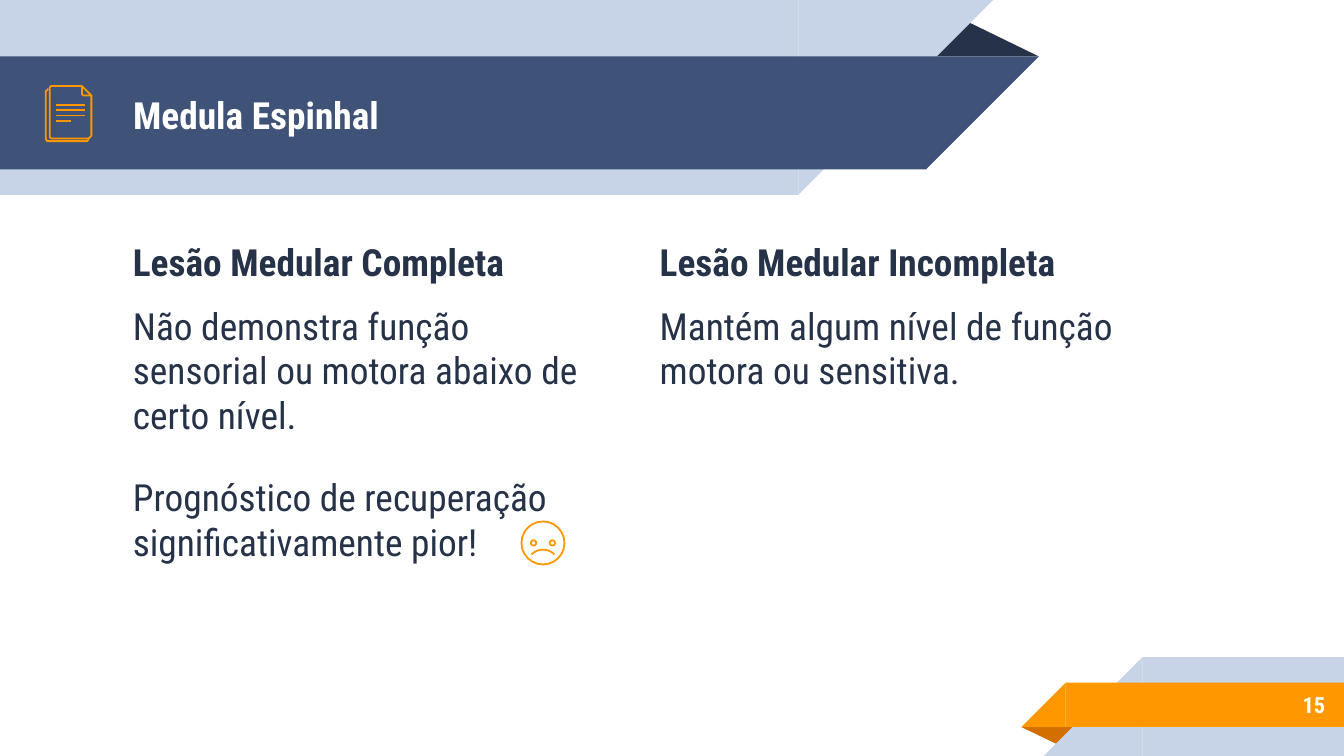
import math
from pptx import Presentation
from pptx.dml.color import RGBColor
from pptx.enum.shapes import MSO_CONNECTOR, MSO_SHAPE
from pptx.enum.text import MSO_ANCHOR, MSO_AUTO_SIZE, PP_ALIGN
from pptx.oxml.ns import qn
from pptx.util import Inches, Pt
from lxml import etree

RECT, OVAL = MSO_SHAPE.RECTANGLE, MSO_SHAPE.OVAL
CORNER, FOLD = MSO_SHAPE.RIGHT_TRIANGLE, MSO_SHAPE.ISOSCELES_TRIANGLE
STRAIGHT = MSO_CONNECTOR.STRAIGHT
TOP, MIDDLE = MSO_ANCHOR.TOP, MSO_ANCHOR.MIDDLE
LEFT, RIGHT = PP_ALIGN.LEFT, PP_ALIGN.RIGHT
NO_FIT = MSO_AUTO_SIZE.NONE

FONT = "Roboto Condensed"
PALE, BLUE, DARK = "C7D3E6", "3F5378", "263248"
ORANGE, RUST, WHITE = "FF9800", "D26F00", "FFFFFF"
STROKE = 0.96
WIDE = 10
HIGH = WIDE * 9 / 16


def color(code):
    return RGBColor.from_string(code)


def inches(*values):
    return [Inches(value) for value in values]


def write(frame, text, size=20, ink=DARK, bold=False, align=LEFT,
          before=0, after=0, first=False):
    """Add one formatted paragraph, reusing the empty one when first."""
    para = frame.paragraphs[0] if first else frame.add_paragraph()
    para.alignment = align
    para.space_before, para.space_after = Pt(before), Pt(after)
    run = para.add_run()
    run.text = text
    font = run.font
    font.name, font.size, font.bold = FONT, Pt(size), bold
    font.color.rgb = color(ink)


def set_frame(shape, anchor=TOP):
    frame = shape.text_frame
    frame.word_wrap, frame.auto_size = True, NO_FIT
    frame.vertical_anchor = anchor
    frame.margin_left = frame.margin_right = Inches(0.1)
    frame.margin_top = frame.margin_bottom = Inches(0.1)
    return frame


def add_box(slide, box, anchor=TOP):
    return set_frame(slide.shapes.add_textbox(*inches(*box)), anchor)


def add_solid(slide, kind, box, fill, turn=0):
    shape = slide.shapes.add_shape(kind, *inches(*box))
    shape.shadow.inherit = False
    shape.fill.solid()
    shape.fill.fore_color.rgb = color(fill)
    shape.line.fill.background()
    shape.rotation = turn
    return shape


def set_stroke(shape):
    shape.line.color.rgb = color(ORANGE)
    shape.line.width = Pt(STROKE)


def add_outline(shape):
    shape.shadow.inherit = False
    shape.fill.background()
    set_stroke(shape)


def add_path(slide, x, y, points, close=False):
    spots = [inches(x + dx, y + dy) for dx, dy in points]
    path = slide.shapes.build_freeform(*spots[0])
    path.add_line_segments(spots[1:], close=close)
    add_outline(path.convert_to_shape())


def add_ring(slide, x, y, radius):
    box = inches(x - radius, y - radius, 2 * radius, 2 * radius)
    add_outline(slide.shapes.add_shape(OVAL, *box))


def add_rule(slide, x, y, width):
    rule = slide.shapes.add_connector(STRAIGHT, *inches(x, y, x + width, y))
    set_stroke(rule)
    etree.SubElement(rule._element.spPr, qn("a:effectLst"))


def add_fold(slide, box, fill, turn=0):
    add_solid(slide, FOLD, box, fill, turn).adjustments[0] = 0.324


def add_head_band(slide, top, width, height, fill):
    """Band from the left edge, cut at 45 degrees on its right."""
    add_solid(slide, RECT, (0, top, width, height), fill)
    add_solid(slide, CORNER, (width, top, height, height), fill, 90)


def add_foot_band(slide, left, top, height, fill):
    """Band to the right edge, cut at 45 degrees on its left."""
    add_solid(slide, RECT, (left, top, WIDE - left, height), fill)
    add_solid(slide, CORNER, (left - height, top, height, height), fill, 270)


def add_header(slide, text):
    add_fold(slide, (6.88, 0.14, 0.85, 0.28), DARK)
    add_head_band(slide, 0, 5.94, 1.45, PALE)
    add_head_band(slide, 0.42, 6.89, 0.84, BLUE)
    title = slide.shapes.title
    title.left, title.top, title.width, title.height = inches(
        0.89, 0.43, 5.75, 0.84)
    write(set_frame(title, MIDDLE), text, ink=WHITE, bold=True, first=True)


def add_footer(slide, number):
    add_fold(slide, (7.6, 5.41, 0.43, 0.14), RUST, 180)
    add_foot_band(slide, 8.5, 4.89, HIGH - 4.89, PALE)
    add_foot_band(slide, 7.93, 5.08, 0.33, ORANGE)
    frame = add_box(slide, (8.33, 5.07, 1.63, 0.35), MIDDLE)
    write(frame, number, size=12, ink=WHITE, bold=True, align=RIGHT,
          first=True)


def add_column(slide, box, head, *body):
    frame = add_box(slide, box)
    write(frame, head, bold=True, before=6, first=True)
    for text in body:
        write(frame, text, before=10, after=10)


def add_pages(slide, x, y):
    """Icon of two stacked sheets with a turned corner."""
    add_path(slide, x, y, [
        (0.32, 0.39), (0.31, 0.41), (0.3, 0.41), (0.02, 0.41), (0.01, 0.41),
        (0, 0.39), (0, 0.04), (0.01, 0.03), (0.02, 0.02)])
    add_path(slide, x, y, [
        (0.34, 0.07), (0.34, 0.37), (0.33, 0.38), (0.32, 0.39), (0.04, 0.39),
        (0.03, 0.38), (0.03, 0.37), (0.03, 0.02), (0.03, 0.01), (0.04, 0),
        (0.27, 0)])
    add_path(slide, x, y, [
        (0.27, 0), (0.34, 0.07), (0.29, 0.07), (0.28, 0.07), (0.27, 0.06)],
        close=True)
    for row, width in enumerate((0.21, 0.21, 0.21, 0.11)):
        add_rule(slide, x + 0.08, y + 0.14 + row * 0.04, width)


def add_sad_face(slide, x, y):
    """Face centred on x, y."""
    add_ring(slide, x, y, 0.16)
    for side in (-1, 1):
        add_ring(slide, x + side * 0.07, y, 0.02)
    angles = [math.radians(step) for step in range(-45, 46, 5)]
    add_path(slide, x, y, [
        (0.12 * math.sin(a), 0.17 - 0.12 * math.cos(a)) for a in angles])


def main():
    deck = Presentation()
    deck.slide_width, deck.slide_height = inches(WIDE, HIGH)
    slide = deck.slides.add_slide(deck.slide_layouts[5])
    add_header(slide, "Medula Espinhal")
    add_footer(slide, "15")
    add_column(slide, (0.89, 1.68, 3.69, 2.98), "Lesão Medular Completa",
               "Não demonstra função sensorial ou motora abaixo de certo nível.",
               "Prognóstico de recuperação significativamente pior!")
    add_column(slide, (4.81, 1.68, 3.69, 2.98), "Lesão Medular Incompleta",
               "Mantém algum nível de função motora ou sensitiva.")
    add_pages(slide, 0.34, 0.64)
    add_sad_face(slide, 4.04, 4.04)
    # The title placeholder comes first, so lift it above the bands.
    tree = slide.shapes._spTree
    tree.append(slide.shapes.title._element)
    deck.save("out.pptx")


if __name__ == "__main__":
    main()
